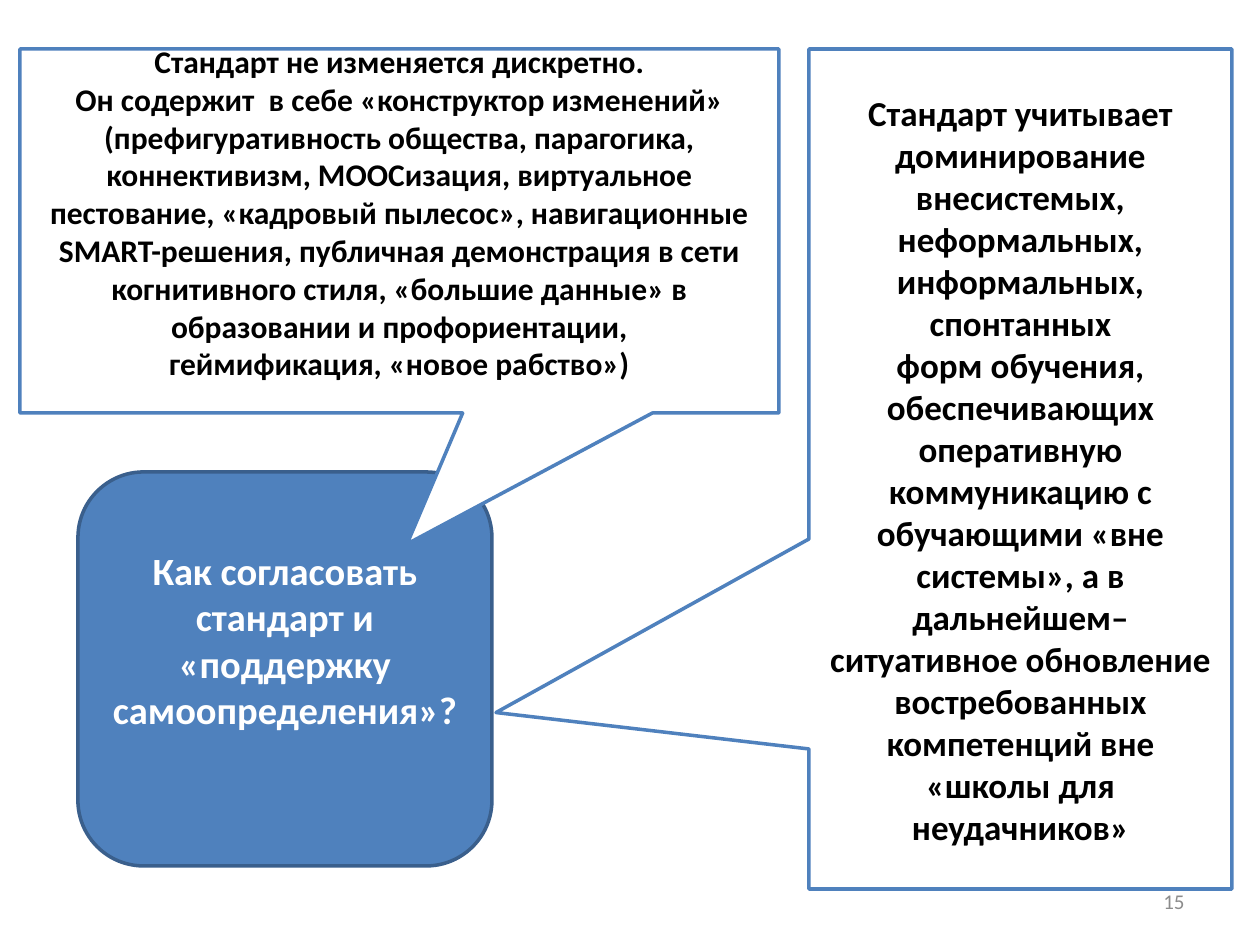
from pptx import Presentation
from pptx.dml.color import RGBColor
from pptx.enum.shapes import MSO_SHAPE
from pptx.enum.text import MSO_ANCHOR, PP_ALIGN
from pptx.util import Pt

PX = 7257  # EMU per px, 126 px to the inch
FONT = "Calibri"
BLUE, DARK_BLUE, WHITE, BLACK, GRAY = "4F81BD", "3A5F8C", "FFFFFF", "000000", "8C8C8C"

QUESTION = ["Как согласовать стандарт и «поддержку самоопределения»?"]
CHANGES = [
    "Стандарт не изменяется дискретно.",
    "Он содержит  в себе «конструктор изменений»",
    "(префигуративность общества, парагогика, коннективизм, MOOCизация, "
    "виртуальное пестование, «кадровый пылесос», навигационные",
    "SMART-решения, публичная демонстрация в сети",
    "когнитивного стиля, «большие данные» в образовании и профориентации,",
    "геймификация, «новое рабство»)",
]
INFORMAL = [
    "Стандарт учитывает доминирование внесистемых,",
    "неформальных, информальных, спонтанных",
    "форм обучения, обеспечивающих оперативную коммуникацию с обучающими "
    "«вне системы», а в дальнейшем– ситуативное обновление востребованных "
    "компетенций вне «школы для неудачников»",
]

# preset, box in px, adjustments, fill, line, lines of text, size, text colour, bottom inset in px
PANELS = [
    (MSO_SHAPE.ROUNDED_RECTANGLE, (78, 472, 414, 394), (), BLUE, DARK_BLUE,
     QUESTION, 22, WHITE, 65),
    (MSO_SHAPE.RECTANGULAR_CALLOUT, (20, 49, 759, 364), (0.01, 0.86), WHITE, BLUE,
     CHANGES, 18, BLACK, 44),
    (MSO_SHAPE.RECTANGULAR_CALLOUT, (809, 49, 423, 840), (-1.24, 0.29), WHITE, BLUE,
     INFORMAL, 20, BLACK, 6),
]
PAGE_NUMBER, PAGE_NUMBER_BOX = ["15"], (903, 876, 294, 50)


def color(value):
    return RGBColor.from_string(value)


def emu(box):
    return [length * PX for length in box]


def write(shape, lines, size, text_color, align=PP_ALIGN.CENTER, bold=True):
    frame = shape.text_frame
    frame.word_wrap = True
    frame.vertical_anchor = MSO_ANCHOR.MIDDLE
    frame.text = "\n".join(lines)
    for paragraph in frame.paragraphs:
        paragraph.alignment = align
        for run in paragraph.runs:
            run.font.name = FONT
            run.font.size = Pt(size)
            run.font.bold = bold
            run.font.color.rgb = color(text_color)


def add_panel(slide, preset, box, adjustments, fill, line, lines, size, text_color, bottom):
    shape = slide.shapes.add_shape(preset, *emu(box))
    shape.shadow.inherit = False
    for index, value in enumerate(adjustments):
        shape.adjustments[index] = value
    shape.fill.solid()
    shape.fill.fore_color.rgb = color(fill)
    shape.line.color.rgb = color(line)
    shape.line.width = Pt(2)
    write(shape, lines, size, text_color)
    shape.text_frame.margin_bottom = bottom * PX


def main():
    presentation = Presentation()
    presentation.slide_width, presentation.slide_height = emu((1260, 945))
    slide = presentation.slides.add_slide(presentation.slide_layouts[6])

    # Question and the two callouts pointing at it
    for panel in PANELS:
        add_panel(slide, *panel)

    # Page number
    number = slide.shapes.add_textbox(*emu(PAGE_NUMBER_BOX))
    write(number, PAGE_NUMBER, 12, GRAY, PP_ALIGN.RIGHT, bold=False)

    presentation.save("out.pptx")


if __name__ == "__main__":
    main()
